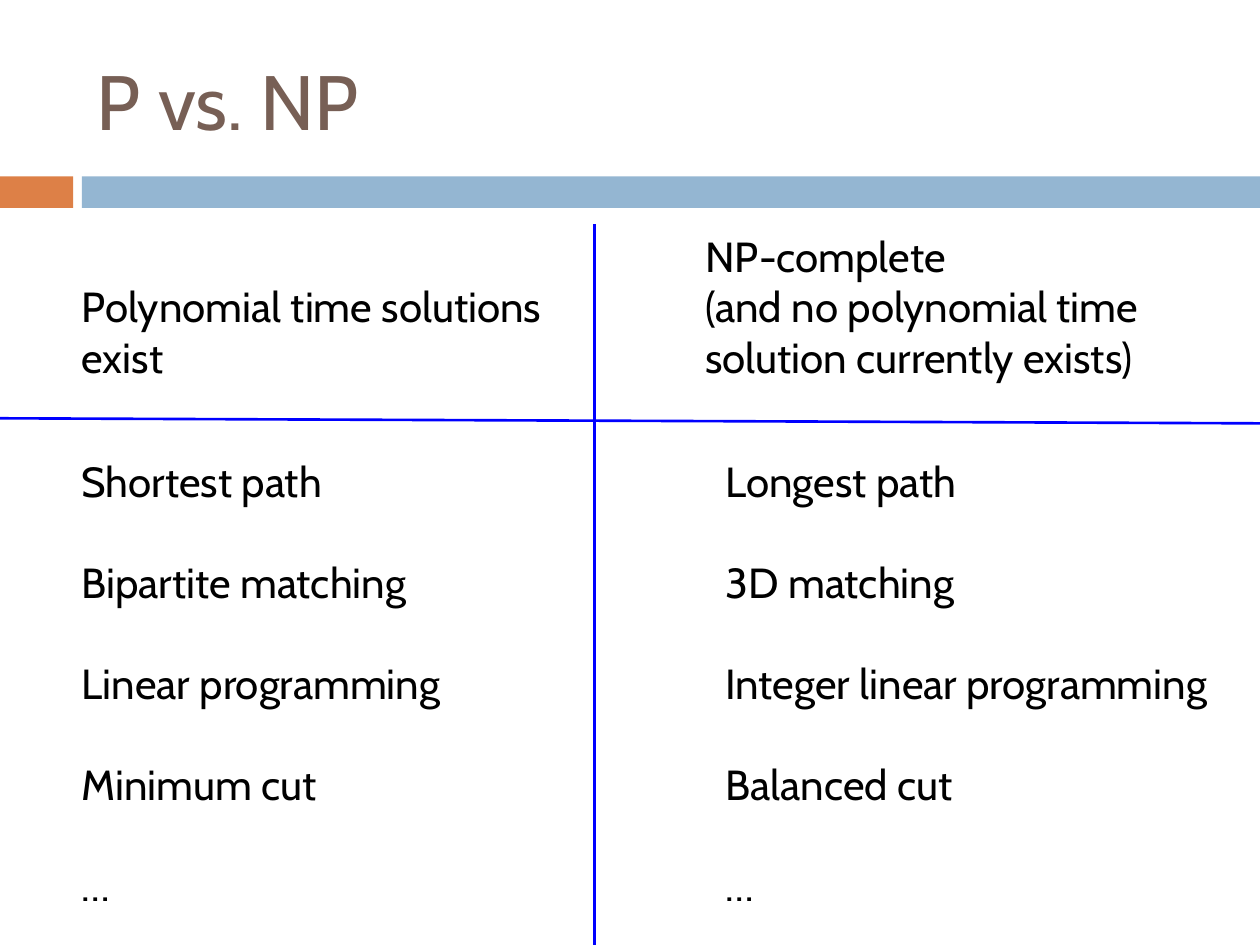
from lxml.etree import SubElement
from pptx import Presentation
from pptx.dml.color import RGBColor
from pptx.enum.shapes import MSO_CONNECTOR, MSO_SHAPE
from pptx.enum.text import MSO_ANCHOR
from pptx.oxml.ns import qn
from pptx.util import Inches, Pt

ORANGE = RGBColor(0xDD, 0x80, 0x47)
SKY = RGBColor(0x94, 0xB6, 0xD2)
BROWN = RGBColor(0x77, 0x5F, 0x55)
BLACK = RGBColor(0, 0, 0)
BLUE = RGBColor(0, 0, 0xFF)

BODY = {"name": "Cabin", "size": Pt(24)}
TITLE = {"name": "Cabin", "size": Pt(44)}

EASY = ["Shortest path", "Bipartite matching", "Linear programming", "Minimum cut", "…"]
HARD = ["Longest path", "3D matching", "Integer linear programming", "Balanced cut", "…"]


def add_text(slide, box, lines, font=BODY, color=BLACK, gap=0, anchor=MSO_ANCHOR.TOP):
    """Place one paragraph per line in the box, with a gap in points between them."""
    frame = slide.shapes.add_textbox(*map(Inches, box)).text_frame
    frame.word_wrap = True
    frame.vertical_anchor = anchor
    frame.text = "\n".join(lines)
    for para in frame.paragraphs:
        para.space_after = Pt(gap)
        for key, value in font.items():
            setattr(para.runs[0].font, key, value)
        para.runs[0].font.color.rgb = color


def add_bar(slide, box, color):
    """Place a plain filled bar in the box."""
    bar = slide.shapes.add_shape(MSO_SHAPE.RECTANGLE, *map(Inches, box))
    bar.shadow.inherit = False
    bar.fill.solid()
    bar.fill.fore_color.rgb = color
    bar.line.fill.background()


def add_rule(slide, ends):
    """Draw a blue rule between two points."""
    rule = slide.shapes.add_connector(MSO_CONNECTOR.STRAIGHT, *map(Inches, ends))
    rule.line.color.rgb = BLUE
    rule.line.width = Pt(1.5)
    SubElement(rule._element.spPr, qn("a:effectLst"))


def add_header(slide, left, top, width, height):
    """Place the title above a two-colour band at the foot of the box."""
    band, tab, space = 0.25, 0.58, 0.07
    base = top + height - band
    start = left + tab + space
    add_bar(slide, (left, base, tab, band), ORANGE)
    add_bar(slide, (start, base, width - start, band), SKY)
    add_text(slide, (left + 0.67, top + 0.25, 8.92, 1.08), ["P vs. NP"],
             TITLE, BROWN, anchor=MSO_ANCHOR.MIDDLE)


def add_grid(slide, left, top, width, height):
    """Place the crossing rules and both columns in the box."""
    split, row = left + 4.72, top + 1.54
    right, foot = left + width, top + height
    list_top = row + 0.25
    add_text(slide, (left + 0.55, top + 0.4, 4.17, 0.9),
             ["Polynomial time solutions exist"])
    add_text(slide, (left + 5.5, top, 4.25, 1.31),
             ["NP-complete", "(and no polynomial time solution currently exists)"])
    add_rule(slide, (left, row, right, row + 0.04))
    add_rule(slide, (split, top, split, foot))
    for start, wide, items in ((0.55, 3.73, EASY), (5.66, 4.34, HARD)):
        add_text(slide, (left + start, list_top, wide, 3.74), items, gap=28.8)


def main():
    """Build the slide and save it."""
    deck = Presentation()
    deck.slide_width, deck.slide_height = Inches(10), Inches(7.5)
    slide = deck.slides.add_slide(deck.slide_layouts[6])
    add_header(slide, 0, 0, 10, 1.65)
    add_grid(slide, 0, 1.78, 10, 5.72)
    deck.save("out.pptx")


if __name__ == "__main__":
    main()
